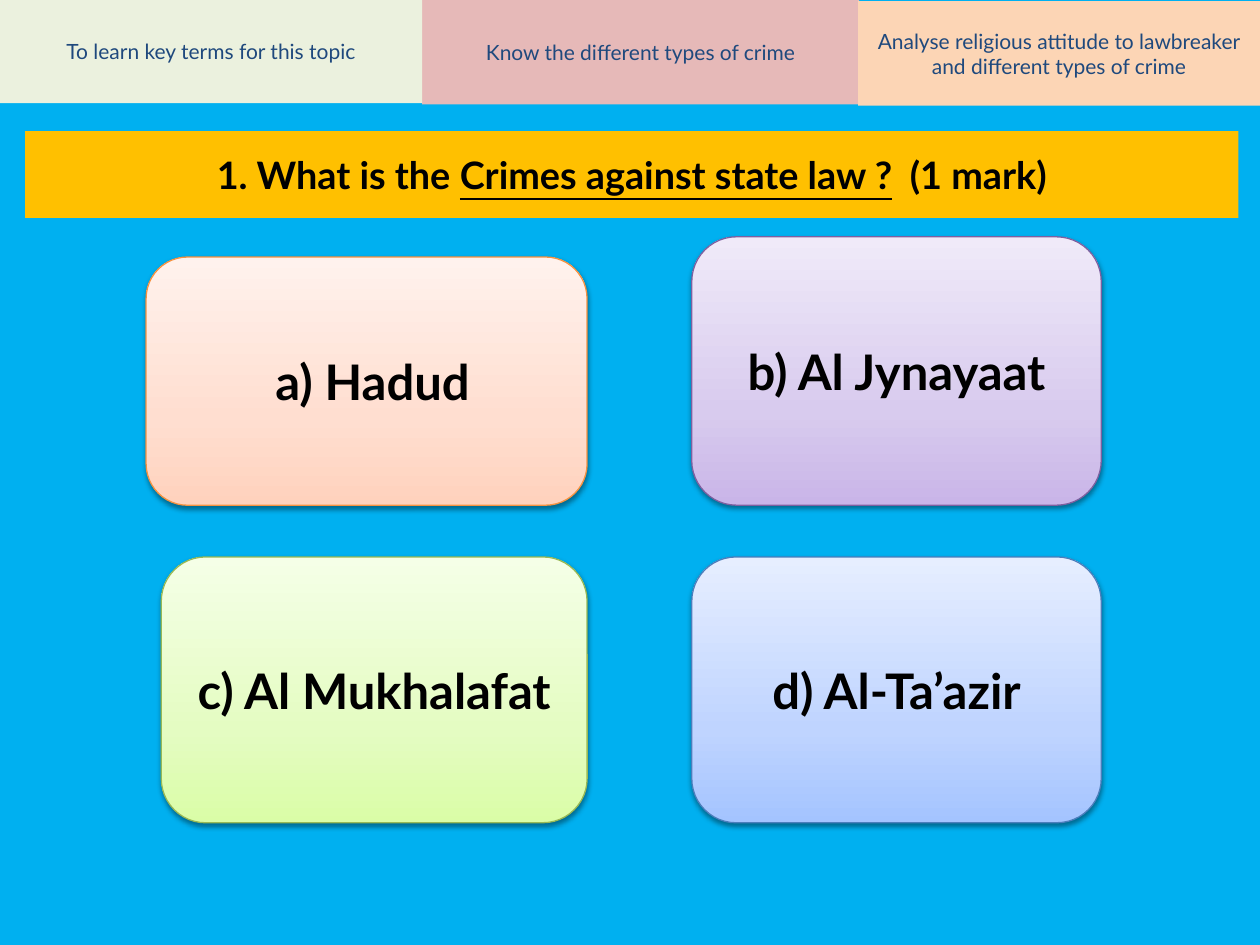
from dataclasses import dataclass

from lxml import etree
from pptx import Presentation
from pptx.dml.color import RGBColor
from pptx.enum.shapes import MSO_SHAPE
from pptx.enum.text import MSO_ANCHOR, PP_ALIGN
from pptx.oxml import parse_xml
from pptx.oxml.ns import qn
from pptx.util import Inches, Pt

RECTANGLE = MSO_SHAPE.RECTANGLE
ROUNDED = MSO_SHAPE.ROUNDED_RECTANGLE
MIDDLE = MSO_ANCHOR.MIDDLE
CENTER = PP_ALIGN.CENTER
DRAWING_NS = "http://schemas.openxmlformats.org/drawingml/2006/main"


@dataclass(frozen=True)
class Theme:
    font: str = "Lato"
    background: str = "00B0F0"
    question_fill: str = "FFC000"
    dark_text: str = "000000"
    goal_text: str = "1F497D"
    goal_size: float = 12
    question_size: float = 21.6
    answer_size: float = 28
    # Each answer: bottom, middle and top of the gradient, then the outline
    orange: tuple = ("FFD2BD", "FFDED0", "FFF2ED", "F69240")
    purple: tuple = ("C9B5E8", "D8CBEE", "F0EAF9", "7D60A0")
    green: tuple = ("DAFDA7", "E4FCC2", "F5FFE7", "98B955")
    blue: tuple = ("A4C4FF", "BFD4FF", "E6EEFF", "4B7EBC")


THEME = Theme()


def add_box(page, kind, place, fill=None):
    """Add a shape without outline or shadow at (left, top, width, height)."""
    box = page.shapes.add_shape(kind, *(Inches(length) for length in place))
    box.shadow.inherit = False
    box.line.fill.background()
    if fill:
        box.fill.solid()
        box.fill.fore_color.rgb = RGBColor.from_string(fill)
    box.text_frame.word_wrap = True
    box.text_frame.vertical_anchor = MIDDLE
    box.text_frame.paragraphs[0].alignment = CENTER
    return box


def add_text(box, text, size, color=THEME.dark_text, bold=False, underline=False):
    span = box.text_frame.paragraphs[0].add_run()
    span.text = text
    span.font.name = THEME.font
    span.font.size = Pt(size)
    span.font.bold = bold
    span.font.underline = underline
    span.font.color.rgb = RGBColor.from_string(color)


deck = Presentation()
deck.slide_width = Inches(10)
deck.slide_height = Inches(7.5)
page = deck.slides.add_slide(deck.slide_layouts[6])
page.background.fill.solid()
page.background.fill.fore_color.rgb = RGBColor.from_string(THEME.background)

# Question banner
question = add_box(page, RECTANGLE, (0.2, 1.04, 9.63, 0.69), THEME.question_fill)
for text, underline in (
    ("1. What is the ", False),
    ("Crimes against state law ?", True),
    ("\t(1 mark)", False),
):
    add_text(question, text, THEME.question_size, bold=True, underline=underline)

# Learning goals along the top
goals = (
    ("Know the different types of crime", 3.35, 0, 3.47, "E6B9B8"),
    ("Analyse religious attitude to lawbreaker and different types of crime",
     6.81, 0.01, 3.19, "FCD5B5"),
    ("To learn key terms for this topic", 0, -0.01, 3.35, "EBF1DE"),
)
for text, left, top, width, fill in goals:
    goal = add_box(page, RECTANGLE, (left, top, width, 0.83), fill)
    add_text(goal, text, THEME.goal_size, color=THEME.goal_text)

# Answer cards
answers = (
    (" a) Hadud", (1.16, 2.04, 3.5, 1.97), THEME.orange),
    ("d) Al-Ta’azir", (5.49, 4.42, 3.25, 2.11), THEME.blue),
    ("c) Al Mukhalafat", (1.28, 4.42, 3.38, 2.11), THEME.green),
    ("b) Al Jynayaat", (5.49, 1.88, 3.25, 2.13), THEME.purple),
)
for text, place, (*shades, outline) in answers:
    card = add_box(page, ROUNDED, place)
    card.line.color.rgb = RGBColor.from_string(outline)
    card.line.width = Pt(0.75)

    card.fill.gradient()
    card.fill.gradient_angle = 90
    properties = card.element.spPr
    stops = properties.find(".//" + qn("a:gsLst"))
    for stop in list(stops):
        stops.remove(stop)
    for percent, shade in zip((0, 35, 100), shades):
        stop = etree.SubElement(stops, qn("a:gs"), pos=str(percent * 1000))
        etree.SubElement(stop, qn("a:srgbClr"), val=shade)

    properties.find(qn("a:effectLst")).append(parse_xml(
        f'<a:outerShdw xmlns:a="{DRAWING_NS}" blurRad="{Pt(3.1)}" dist="{Pt(1.6)}"'
        ' dir="5400000" rotWithShape="0"><a:srgbClr val="000000">'
        '<a:alpha val="38000"/></a:srgbClr></a:outerShdw>'
    ))
    add_text(card, text, THEME.answer_size, bold=True)

deck.save("out.pptx")
